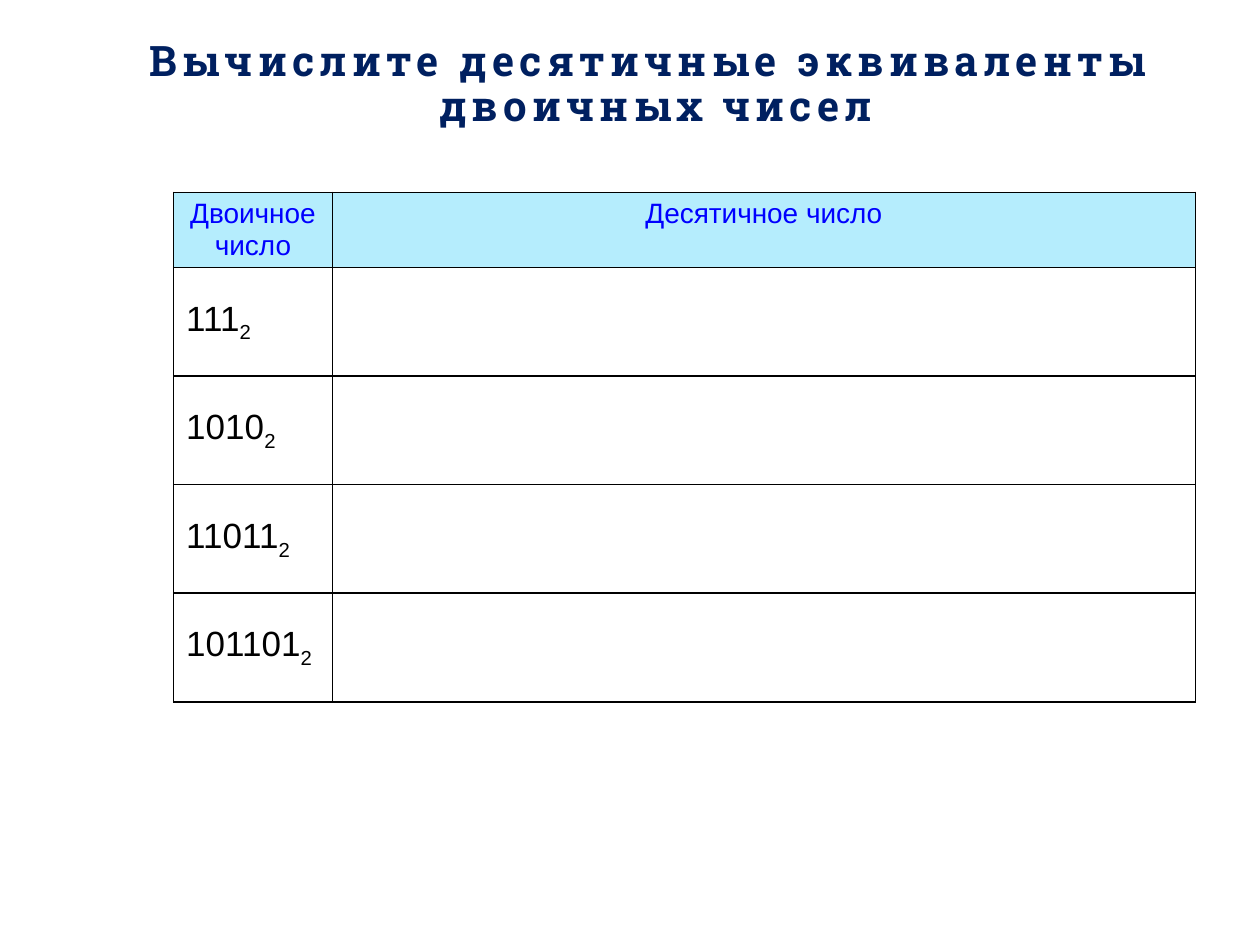
from dataclasses import dataclass
from lxml.etree import SubElement
from pptx import Presentation
from pptx.dml.color import RGBColor
from pptx.enum.text import MSO_ANCHOR, MSO_AUTO_SIZE, PP_ALIGN
from pptx.oxml import parse_xml
from pptx.oxml.ns import nsdecls, qn
from pptx.util import Cm, Pt

COLORS = {
    "title": "002060", "edge": "F4F5FA", "glow": "6FB4F0",
    "head": "0000FF", "fill": "B5EDFD", "ink": "000000",
}


@dataclass
class Style:
    font: str
    size: int
    color: str
    bold: bool = False


TITLE = Style("Roboto Slab", 24, "title", True)
HEAD = Style("Arial", 16, "head")
BODY = Style("Arial", 20, "ink")


def format_run(run, style: Style) -> None:
    font = run.font
    font.name, font.size, font.bold = style.font, Pt(style.size), style.bold
    font.color.rgb = RGBColor.from_string(COLORS[style.color])


def add_glow(run) -> None:
    """Space the letters, edge them and give them a soft shadow."""
    props = run.font._element
    props.set("spc", "300")
    props.insert(0, parse_xml(
        f'<a:ln {nsdecls("a")} w="11430"><a:solidFill>'
        f'<a:srgbClr val="{COLORS["edge"]}"/></a:solidFill></a:ln>'))
    props.find(qn("a:solidFill")).addnext(parse_xml(
        f'<a:effectLst {nsdecls("a")}>'
        '<a:outerShdw blurRad="50800" dist="38100" dir="2700000">'
        f'<a:srgbClr val="{COLORS["glow"]}"/></a:outerShdw></a:effectLst>'))


def add_border(cell) -> None:
    props = cell._tc.get_or_add_tcPr()
    for at, side in enumerate(("lnL", "lnR", "lnT", "lnB")):
        line = parse_xml(f'<a:{side} {nsdecls("a")} w="12700"/>')
        fill = SubElement(line, qn("a:solidFill"))
        SubElement(fill, qn("a:srgbClr"), val=COLORS["ink"])
        props.insert(at, line)


def fill_head(cell, text: str) -> None:
    cell.text_frame.text = text
    para = cell.text_frame.paragraphs[0]
    para.alignment = PP_ALIGN.CENTER
    format_run(para.runs[0], HEAD)
    cell.fill.solid()
    cell.fill.fore_color.rgb = RGBColor.from_string(COLORS["fill"])


def fill_number(cell, digits: str) -> None:
    """Write a binary number with its base as a subscript."""
    cell.vertical_anchor = MSO_ANCHOR.MIDDLE
    para = cell.text_frame.paragraphs[0]
    para.text = digits
    base = para.add_run()
    base.text = "2"
    for run in para.runs:
        format_run(run, BODY)
    base.font._element.set("baseline", "-25000")


def main() -> None:
    deck = Presentation()
    deck.slide_width, deck.slide_height = Cm(25.4), Cm(19.05)
    slide = deck.slides.add_slide(deck.slide_layouts[5])

    # Title
    title = slide.shapes.title
    title.left, title.top = Cm(1.5), Cm(0.53)
    title.width, title.height = Cm(23.44), Cm(2.39)
    frame = title.text_frame
    frame.text = "Вычислите десятичные эквиваленты \nдвоичных чисел"
    frame.auto_size = MSO_AUTO_SIZE.NONE
    frame.vertical_anchor = MSO_ANCHOR.MIDDLE
    for para in frame.paragraphs:
        para.alignment = PP_ALIGN.CENTER
        para.line_spacing = 0.9
        format_run(para.runs[0], TITLE)
        add_glow(para.runs[0])

    # Table grid
    numbers = ("111", "1010", "11011", "101101")
    widths = (3.2, 17.4)
    heights = (1.45,) + (2.19,) * len(numbers)
    table = slide.shapes.add_table(
        len(heights), len(widths), Cm(3.5), Cm(3.88),
        Cm(sum(widths)), Cm(sum(heights))).table
    table.first_row = table.horz_banding = False
    for col, width in zip(table.columns, widths):
        col.width = Cm(width)
    for row, height in zip(table.rows, heights):
        row.height = Cm(height)
    for cell in table.iter_cells():
        cell.fill.background()
        add_border(cell)

    # Table content
    for col, text in enumerate(("Двоичное число", "Десятичное число")):
        fill_head(table.cell(0, col), text)
    for row, digits in enumerate(numbers, 1):
        fill_number(table.cell(row, 0), digits)

    deck.save("out.pptx")


if __name__ == "__main__":
    main()
